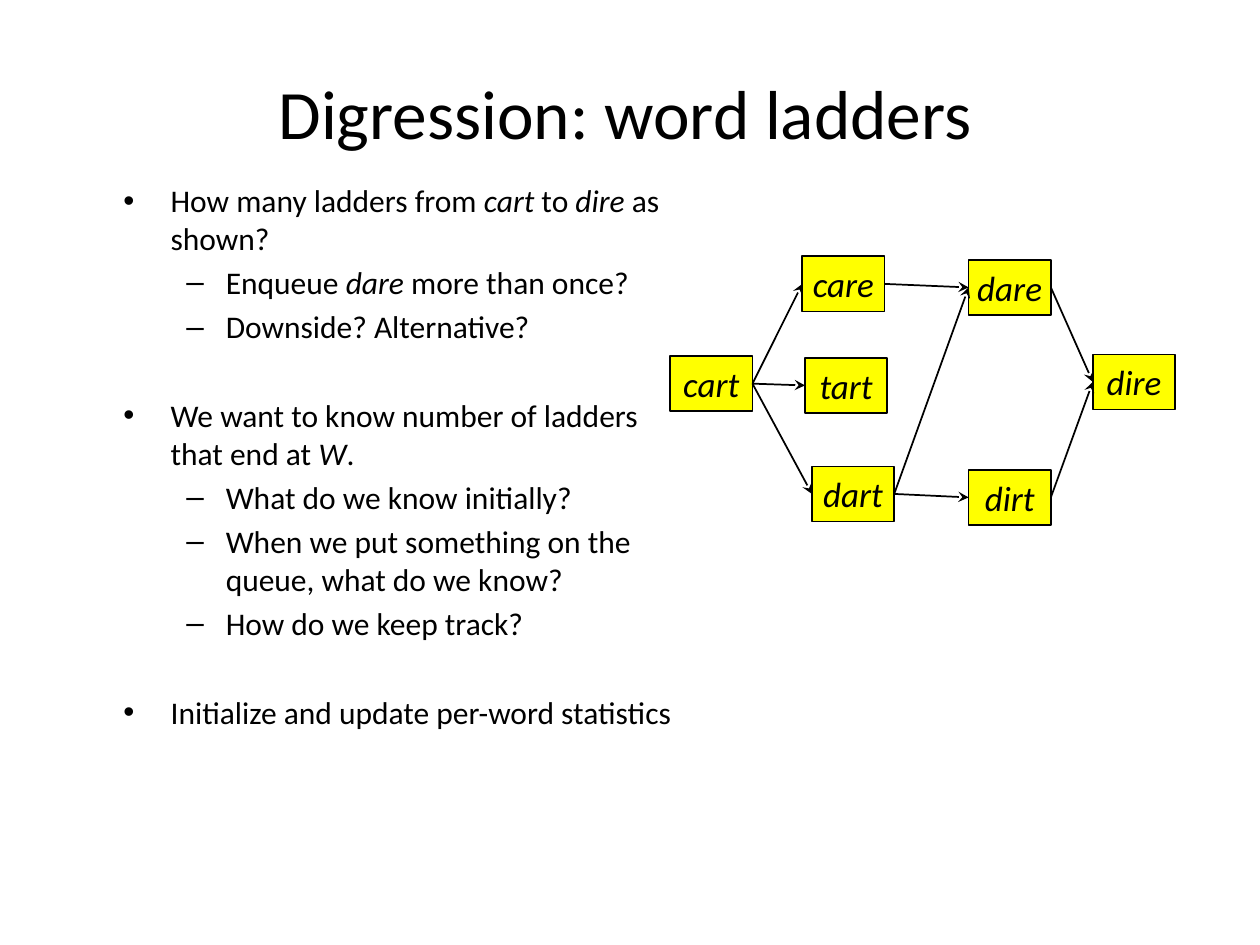
"""Build the word-ladders slide: questions on the left, word graph on the right."""
from dataclasses import dataclass

from lxml import etree
from pptx import Presentation
from pptx.dml.color import RGBColor
from pptx.enum.shapes import MSO_CONNECTOR, MSO_SHAPE
from pptx.enum.text import MSO_ANCHOR, PP_ALIGN
from pptx.oxml.ns import qn
from pptx.util import Pt

RECTANGLE = MSO_SHAPE.RECTANGLE
STRAIGHT = MSO_CONNECTOR.STRAIGHT
MIDDLE = MSO_ANCHOR.MIDDLE
CENTER = PP_ALIGN.CENTER
TITLE_ONLY = 5
LEFT_SITE, RIGHT_SITE = 1, 3


@dataclass(frozen=True)
class Theme:
    """Colours, type sizes and spacing of the slide."""
    font: str = "Calibri"
    ink: RGBColor = RGBColor(0, 0, 0)
    highlight: RGBColor = RGBColor(255, 255, 0)
    title_size: float = 39.6
    body_size: float = 18
    word_size: float = 20
    line_width: float = 1
    paragraph_gap: float = 3.6
    section_gap: float = 29.2


THEME = Theme()
WORD_WIDTH, WORD_HEIGHT = 47, 31.5
LEVELS = [
    {"bullet": "•", "marL": 27, "indent": -27},
    {"bullet": "–", "marL": 58.5, "indent": -22.5},
]
SECTIONS = [
    ["How many ladders from *cart* to *dire* as shown?",
     "Enqueue *dare* more than once?",
     "Downside? Alternative?"],
    ["We want to know number of ladders that end at *W*.",
     "What do we know initially?",
     "When we put something on the queue, what do we know?",
     "How do we keep track?"],
    ["Initialize and update per-word statistics"],
]
WORD_POSITIONS = {
    "cart": (383, 203.5),
    "care": (458.5, 146.5),
    "tart": (460, 204.5),
    "dart": (464, 266.5),
    "dare": (553.5, 148.5),
    "dirt": (553.5, 268.5),
    "dire": (624.5, 202.5),
}
LADDER_STEPS = [
    ("cart", "tart"), ("care", "dare"), ("cart", "care"), ("cart", "dart"),
    ("dart", "dirt"), ("dart", "dare"), ("dare", "dire"), ("dirt", "dire"),
]


def apply_format(target, values):
    """Set each named attribute on the target."""
    for name, value in values.items():
        setattr(target, name, value)


def add_run(paragraph, text, size, italic=False):
    """Append a run in the theme font."""
    run = paragraph.add_run()
    run.text = text
    apply_format(run.font, {"name": THEME.font, "size": Pt(size), "italic": italic})
    run.font.color.rgb = THEME.ink


def set_title(slide, text):
    """Place and fill the title placeholder."""
    title = slide.shapes.title
    apply_format(title, {"left": Pt(60), "top": Pt(36),
                         "width": Pt(594.5), "height": Pt(56)})
    title.text_frame.vertical_anchor = MIDDLE
    heading = title.text_frame.paragraphs[0]
    heading.alignment = CENTER
    add_run(heading, text, THEME.title_size)


def set_bullet(paragraph, level):
    """Give a paragraph the bullet and hanging indent of its level."""
    style = LEVELS[level]
    paragraph.level = level
    properties = paragraph._p.get_or_add_pPr()
    for name in ("marL", "indent"):
        properties.set(name, str(int(Pt(style[name]))))
    etree.SubElement(properties, qn("a:buFont")).set("typeface", "Arial")
    etree.SubElement(properties, qn("a:buChar")).set("char", style["bullet"])


def add_questions(slide, sections):
    """Add sections of a lead point and subpoints, with asterisks around italics."""
    frame = slide.shapes.add_textbox(Pt(63.4), Pt(100), Pt(336), Pt(364)).text_frame
    frame.word_wrap = True
    for section_index, section in enumerate(sections):
        for point_index, point in enumerate(section):
            first = section_index == point_index == 0
            paragraph = frame.paragraphs[0] if first else frame.add_paragraph()
            new_section = section_index > 0 and point_index == 0
            gap = THEME.section_gap if new_section else THEME.paragraph_gap
            paragraph.space_before = Pt(gap)
            set_bullet(paragraph, min(point_index, 1))
            for part_index, part in enumerate(point.split("*")):
                if part:
                    add_run(paragraph, part, THEME.body_size, part_index % 2 == 1)


def add_word(slide, word, left, top):
    """Add one highlighted word box and return it."""
    box = slide.shapes.add_shape(RECTANGLE, Pt(left), Pt(top),
                                 Pt(WORD_WIDTH), Pt(WORD_HEIGHT))
    box.shadow.inherit = False
    box.fill.solid()
    box.fill.fore_color.rgb = THEME.highlight
    box.line.color.rgb = THEME.ink
    box.line.width = Pt(THEME.line_width)
    apply_format(box.text_frame, {"word_wrap": False, "vertical_anchor": MIDDLE})
    label = box.text_frame.paragraphs[0]
    label.alignment = CENTER
    add_run(label, word, THEME.word_size, italic=True)
    return box


def add_step(slide, source, target):
    """Add an arrow from the right of one word to the left of the next."""
    arrow = slide.shapes.add_connector(STRAIGHT, 0, 0, 0, 0)
    arrow.begin_connect(source, RIGHT_SITE)
    arrow.end_connect(target, LEFT_SITE)
    arrow.line.color.rgb = THEME.ink
    arrow.line.width = Pt(THEME.line_width)
    outline = arrow.line._get_or_add_ln()
    etree.SubElement(outline, qn("a:tailEnd")).set("type", "stealth")
    etree.SubElement(arrow._element.spPr, qn("a:effectLst"))


def main():
    """Create and save the slide."""
    presentation = Presentation()
    apply_format(presentation, {"slide_width": Pt(720), "slide_height": Pt(540)})
    slide = presentation.slides.add_slide(presentation.slide_layouts[TITLE_ONLY])
    set_title(slide, "Digression: word ladders")
    add_questions(slide, SECTIONS)
    words = {word: add_word(slide, word, *position)
             for word, position in WORD_POSITIONS.items()}
    for source, target in LADDER_STEPS:
        add_step(slide, words[source], words[target])
    presentation.save("out.pptx")


if __name__ == "__main__":
    main()
